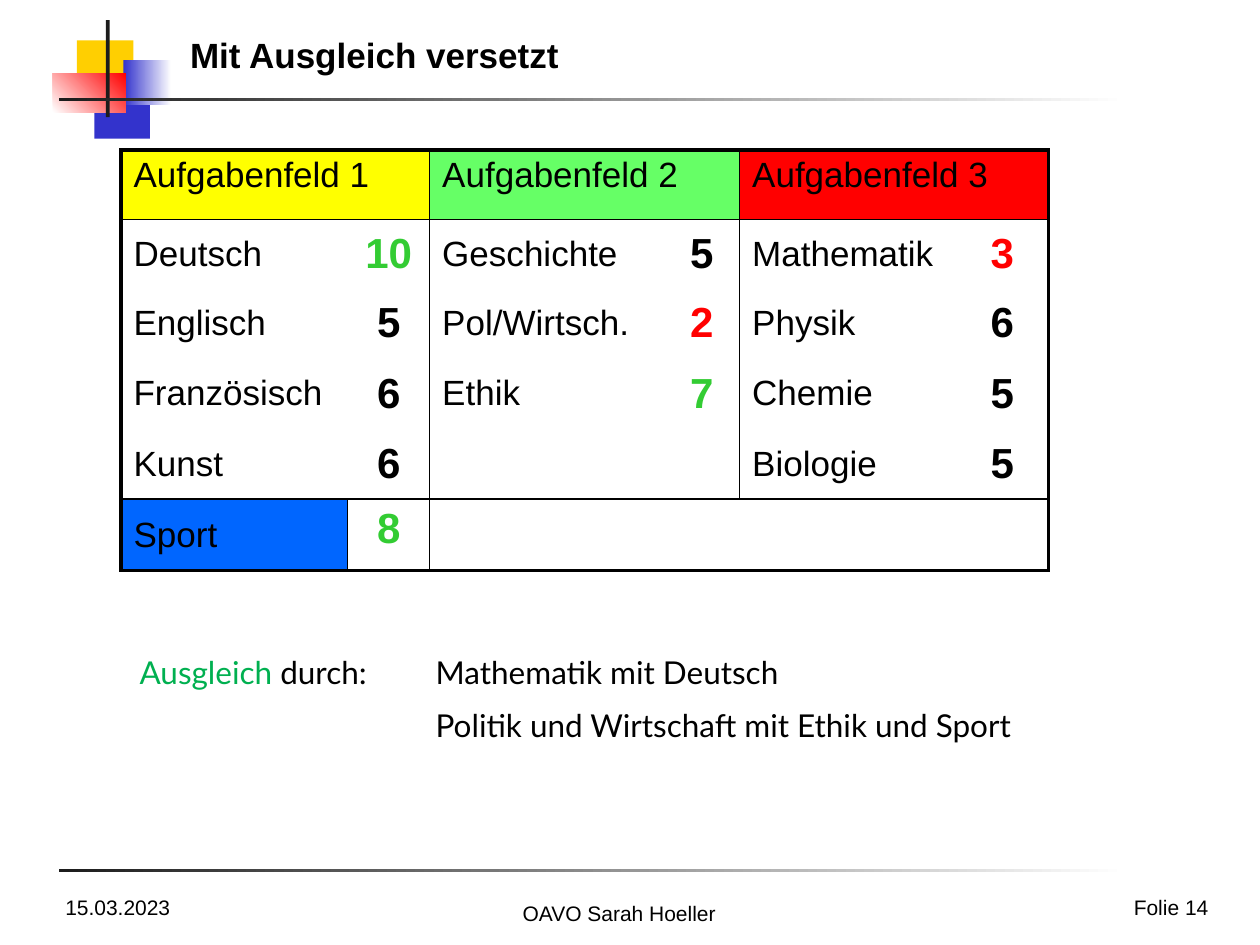
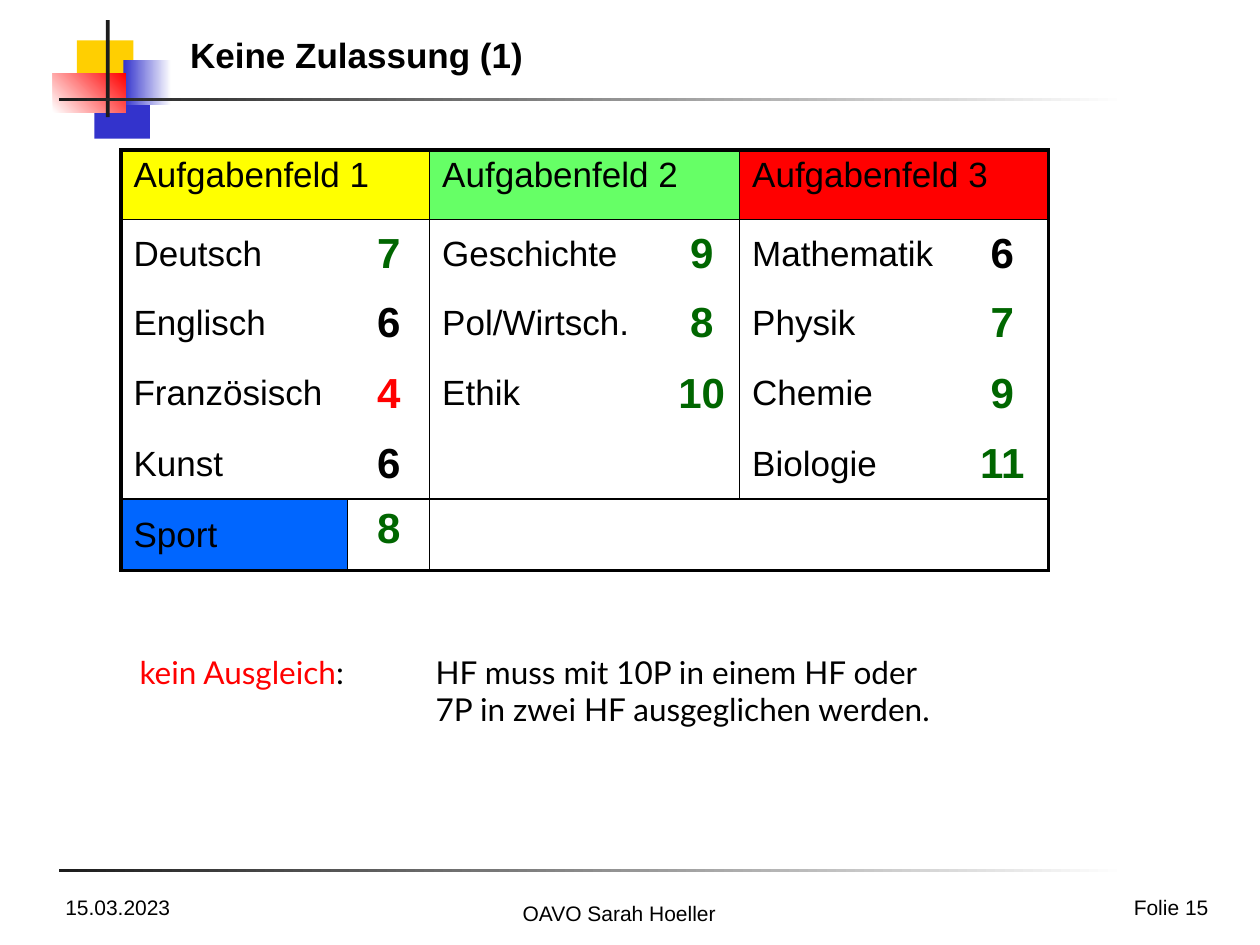
import pptx
import pptx.dml.color
import pptx.enum.shapes
import pptx.enum.text
import pptx.oxml
import pptx.oxml.ns
import pptx.util

Inches, Pt = pptx.util.Inches, pptx.util.Pt
ALIGN, ANCHOR = pptx.enum.text.PP_ALIGN, pptx.enum.text.MSO_ANCHOR

# Content
DATE, AUTHOR = "15.03.2023", "OAVO Sarah Hoeller"
FIELDS = [
    ("Aufgabenfeld 1", "FFFF00", ["Deutsch", "Englisch", "Französisch", "Kunst"]),
    ("Aufgabenfeld 2", "66FF66", ["Geschichte", "Pol/Wirtsch.", "Ethik"]),
    ("Aufgabenfeld 3", "FF0000", ["Mathematik", "Physik", "Chemie", "Biologie"]),
]
SPORT = "Sport"

# Each note is a list of paragraphs; a paragraph is a list of lines made of (text, colour) runs
SLIDES = [
    {
        "title": "Mit Ausgleich versetzt", "number": 14, "good": "33CC33",
        "grades": [[10, 5, 6, 6], [5, 2, 7], [3, 6, 5, 5]], "sport": 8,
        "note": [
            [[("Ausgleich", "00B050"), (" durch: \tMathematik mit Deutsch", "000000")]],
            [[("\tPolitik und Wirtschaft mit Ethik und Sport", "000000")]],
        ],
        "note_height": 0.85,
    },
    {
        "title": "Keine Zulassung (1)", "number": 15, "good": "006600",
        "grades": [[7, 6, 4, 6], [9, 8, 10], [6, 7, 9, 11]], "sport": 8,
        "note": [
            [[("kein Ausgleich", "FF0000"), (": \tHF muss mit 10P in einem HF oder", "000000")],
             [("\t7P in zwei HF ausgeglichen werden.", "000000")]],
        ],
        "note_height": 0.7,
    },
]


class Theme:
    font, note_font = "Arial", "Lato"
    title, body, grade, note, footer = 20, 20, 24, 18, 12
    text, white, bad, sport = "000000", "FFFFFF", "FF0000", "0066FF"
    yellow, blue, red, dark = "FFCF01", "3333CC", "FF0000", "1C1C1C"
    thick, thin = 2.25, 1


# Left, top, width, height, colours (two make a gradient), gradient angle
DECORATION = [
    (0.61, 0.32, 0.45, 0.35, [Theme.yellow], 0),
    (0.85, 0.72, 0.34, 0.35, [Theme.yellow, Theme.white], 0),
    (0.75, 0.75, 0.44, 0.35, [Theme.blue], 0),
    (0.98, 0.48, 0.38, 0.35, [Theme.blue, Theme.white], 0),
    (0.42, 0.58, 0.58, 0.31, [Theme.white, Theme.red], 45),
    (0.84, 0.16, 0.03, 0.77, [Theme.dark], 0),
    (0.47, 0.78, 8.47, 0.02, [Theme.dark, Theme.white], 0),
    (0.47, 6.9, 8.47, 0.02, [Theme.dark, Theme.white], 0),
]

# Table grid
TABLE_LEFT, TABLE_TOP = 0.96, 1.19
COLUMNS = [1.8, 0.65, 1.86, 0.6, 1.72, 0.73]
ROWS = [0.55, 0.55, 0.55, 0.57, 0.55, 0.57]
LAST = len(ROWS) - 1
NOTE_TAB = 2.35


def rgb(value):
    return pptx.dml.color.RGBColor.from_string(value)


def fill_solid(fill, color):
    fill.solid()
    fill.fore_color.rgb = rgb(color)


def set_font(paragraph, size, color=Theme.text, bold=False, name=Theme.font):
    font = paragraph.font
    font.name, font.size, font.bold = name, Pt(size), bold
    font.color.rgb = rgb(color)


def add_text_box(slide, left, top, width, height):
    box = slide.shapes.add_textbox(Inches(left), Inches(top), Inches(width), Inches(height))
    box.text_frame.word_wrap = True
    return box


def add_line_of_text(slide, place, text, size, align=ALIGN.LEFT, bold=False):
    box = add_text_box(slide, *place)
    paragraph = box.text_frame.paragraphs[0]
    paragraph.text, paragraph.alignment = text, align
    set_font(paragraph, size, bold=bold)
    return box


def add_decoration(slide):
    for left, top, width, height, colors, angle in DECORATION:
        shape = slide.shapes.add_shape(
            pptx.enum.shapes.MSO_SHAPE.RECTANGLE,
            Inches(left), Inches(top), Inches(width), Inches(height))
        shape.shadow.inherit = False
        shape.line.fill.background()
        if len(colors) == 1:
            fill_solid(shape.fill, colors[0])
            continue
        shape.fill.gradient()
        shape.fill.gradient_angle = angle
        for stop, color, position in zip(shape.fill.gradient_stops, colors, (0, 1)):
            stop.color.rgb, stop.position = rgb(color), position


def add_frame(slide, title, number):
    add_decoration(slide)
    add_line_of_text(slide, (7.36, 7.05, 2.33, 0.22), f"Folie {number}", Theme.footer, ALIGN.RIGHT)
    add_line_of_text(slide, (0.42, 7.05, 2.33, 0.3), DATE, Theme.footer)
    add_line_of_text(slide, (3.33, 7.1, 3.17, 0.24), AUTHOR, Theme.footer, ALIGN.CENTER)
    heading = add_line_of_text(slide, (1.41, 0.31, 7.19, 0.34), title, Theme.title, bold=True)
    heading.text_frame.vertical_anchor = ANCHOR.BOTTOM
    fill_solid(heading.fill, Theme.white)


# Border widths: 0 means no line
def vertical_width(row, boundary):
    if boundary in (0, len(COLUMNS)):
        return Theme.thick
    return Theme.thin if boundary in ((1, 2) if row == LAST else (2, 4)) else 0


def horizontal_width(boundary):
    if boundary in (0, len(ROWS)):
        return Theme.thick
    return Theme.thin if boundary in (1, LAST) else 0


def set_borders(cell, row, column):
    right = column + (cell.span_width if cell.is_merge_origin else 1)
    widths = {
        "lnL": vertical_width(row, column), "lnR": vertical_width(row, right),
        "lnT": horizontal_width(row), "lnB": horizontal_width(row + 1),
    }
    properties = cell._tc.get_or_add_tcPr()
    for index, (tag, width) in enumerate(widths.items()):
        paint = (f'<a:solidFill><a:srgbClr val="{Theme.text}"/></a:solidFill>'
                 if width else "<a:noFill/>")
        properties.insert(index, pptx.oxml.parse_xml(
            f'<a:{tag} {pptx.oxml.ns.nsdecls("a")} w="{int(Pt(width))}">{paint}</a:{tag}>'))


def write_cell(cell, text, anchor=ANCHOR.MIDDLE, align=ALIGN.LEFT, **font):
    cell.vertical_anchor = anchor
    paragraph = cell.text_frame.paragraphs[0]
    paragraph.text, paragraph.alignment = text, align
    set_font(paragraph, **{"size": Theme.body, **font})


def write_grade(cell, grade, good, anchor=ANCHOR.MIDDLE):
    color = good if grade >= 7 else Theme.bad if grade < 5 else Theme.text
    write_cell(cell, str(grade), anchor, ALIGN.CENTER, size=Theme.grade, color=color, bold=True)


def add_grades(slide, grades, sport, good):
    table = slide.shapes.add_table(
        len(ROWS), len(COLUMNS), Inches(TABLE_LEFT), Inches(TABLE_TOP),
        Inches(sum(COLUMNS)), Inches(sum(ROWS))).table
    table.first_row = table.horz_banding = False
    for column, width in zip(table.columns, COLUMNS):
        column.width = Inches(width)
    for row, height in zip(table.rows, ROWS):
        row.height = Inches(height)
    for cell in table.iter_cells():
        cell.fill.background()

    # One pair of columns for each field
    for field, ((name, color, subjects), marks) in enumerate(zip(FIELDS, grades)):
        column = 2 * field
        header = table.cell(0, column)
        header.merge(table.cell(0, column + 1))
        write_cell(header, name, ANCHOR.TOP)
        fill_solid(header.fill, color)
        for row, (subject, mark) in enumerate(zip(subjects, marks), start=1):
            write_cell(table.cell(row, column), subject)
            write_grade(table.cell(row, column + 1), mark, good)

    # Sport row
    write_cell(table.cell(LAST, 0), SPORT)
    fill_solid(table.cell(LAST, 0).fill, Theme.sport)
    write_grade(table.cell(LAST, 1), sport, good, ANCHOR.TOP)

    for row in range(len(ROWS)):
        for column in range(len(COLUMNS)):
            set_borders(table.cell(row, column), row, column)


def add_note(slide, paragraphs, height):
    frame = add_text_box(slide, 1.01, 5.13, 7.33, height).text_frame
    for index, lines in enumerate(paragraphs):
        paragraph = frame.add_paragraph() if index else frame.paragraphs[0]
        paragraph.space_before = Pt(Theme.note / 2 if index else 0)
        paragraph._p.get_or_add_pPr().append(pptx.oxml.parse_xml(
            f'<a:tabLst {pptx.oxml.ns.nsdecls("a")}>'
            f'<a:tab pos="{int(Inches(NOTE_TAB))}" algn="l"/></a:tabLst>'))
        set_font(paragraph, Theme.note, name=Theme.note_font)
        for number, line in enumerate(lines):
            if number:
                paragraph.add_line_break()
            for text, color in line:
                run = paragraph.add_run()
                run.text = text
                run.font.color.rgb = rgb(color)


def main():
    presentation = pptx.Presentation()
    presentation.slide_width, presentation.slide_height = Inches(10), Inches(7.5)
    for content in SLIDES:
        slide = presentation.slides.add_slide(presentation.slide_layouts[6])
        add_frame(slide, content["title"], content["number"])
        add_grades(slide, content["grades"], content["sport"], content["good"])
        add_note(slide, content["note"], content["note_height"])
    presentation.save("out.pptx")


if __name__ == "__main__":
    main()
